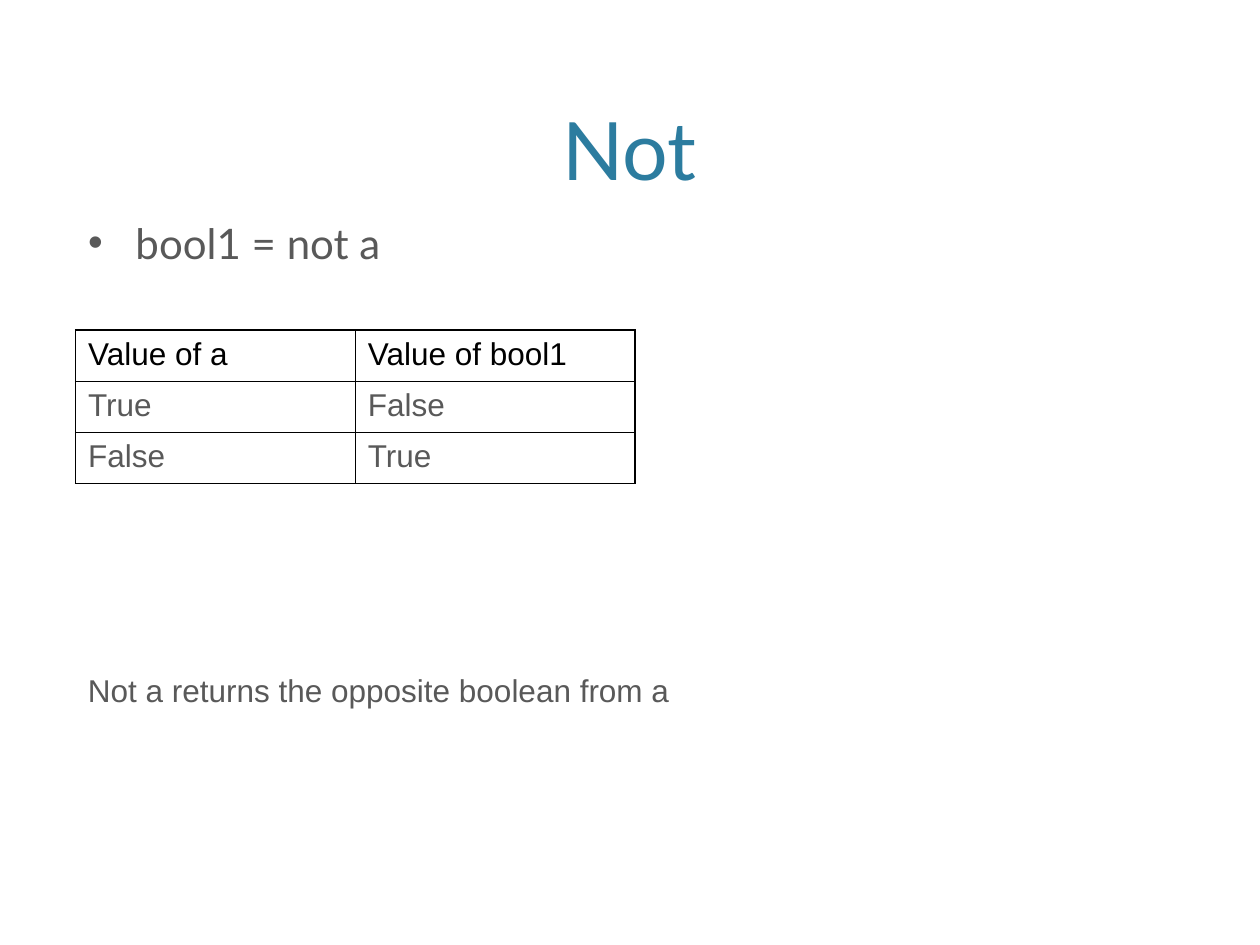
from lxml import etree
from pptx import Presentation
from pptx.dml.color import RGBColor
from pptx.enum.text import MSO_ANCHOR, MSO_AUTO_SIZE, PP_ALIGN
from pptx.oxml import parse_xml
from pptx.oxml.ns import nsdecls, qn
from pptx.util import Inches, Pt

BOTTOM, TOP = MSO_ANCHOR.BOTTOM, MSO_ANCHOR.TOP
FIXED, GROW = MSO_AUTO_SIZE.NONE, MSO_AUTO_SIZE.SHAPE_TO_FIT_TEXT
CENTER, LEFT = PP_ALIGN.CENTER, PP_ALIGN.LEFT
BLUE, GRAY, BLACK = "2C7C9F", "595959", "000000"
ROWS = [("Value of a", "Value of bool1"), ("True", "False"), ("False", "True")]


def paint(color):
    return RGBColor.from_string(color)


def place(shape, box):
    shape.left, shape.top, shape.width, shape.height = map(Inches, box)


def write(frame, text, face, size, color, align=LEFT):
    frame.text = text
    para = frame.paragraphs[0]
    para.alignment = align
    font = para.font
    font.name, font.size = face, Pt(size)
    font.color.rgb = paint(color)
    return para


def add_title(slide, box):
    title = slide.shapes.title
    place(title, box)
    frame = title.text_frame
    frame.vertical_anchor, frame.auto_size = BOTTOM, FIXED
    write(frame, "Not", "Lato", 46, BLUE, CENTER)


def add_body(slide, box):
    body = slide.placeholders[1]
    place(body, box)
    frame = body.text_frame
    frame.vertical_anchor, frame.auto_size = TOP, FIXED
    props = frame.paragraphs[0]._p.get_or_add_pPr()
    props.set("marL", "0")
    props.set("indent", "0")
    etree.SubElement(props, qn("a:buNone"))
    para = write(frame, "bool1 = not a", "Lato", 24, GRAY)
    para.space_before = Pt(0)
    para.line_spacing = 0.8


def add_edges(cell, color, width):
    props = cell._tc.get_or_add_tcPr()
    for spot, side in enumerate(("lnL", "lnR", "lnT", "lnB")):
        edge = parse_xml(
            f'<a:{side} {nsdecls("a")} w="{Pt(width)}"><a:solidFill>'
            f'<a:srgbClr val="{color}"/></a:solidFill></a:{side}>'
        )
        props.insert(spot, edge)


def add_truth(slide, box):
    frame = slide.shapes.add_table(len(ROWS), len(ROWS[0]), *map(Inches, box))
    table = frame.table
    table.first_row = table.horz_banding = False
    for row, words in enumerate(ROWS):
        for col, word in enumerate(words):
            cell = table.cell(row, col)
            cell.fill.background()
            add_edges(cell, BLACK, 1)
            write(cell.text_frame, word, "Arial", 18, GRAY if row else BLACK)


def add_note(slide, box):
    frame = slide.shapes.add_textbox(*map(Inches, box)).text_frame
    frame.word_wrap, frame.auto_size = True, GROW
    write(frame, "Not a returns the opposite boolean from a", "Arial", 18, GRAY)


def main():
    deck = Presentation()
    deck.slide_width, deck.slide_height = Inches(10), Inches(7.5)
    slide = deck.slides.add_slide(deck.slide_layouts[1])
    add_title(slide, (0.6, 0.15, 8.79, 1.46))
    add_body(slide, (0.6, 1.75, 8.79, 4.75))
    add_truth(slide, (0.6, 2.62, 4.44, 1.22))
    add_note(slide, (0.6, 5.28, 6.9, 0.4))
    deck.save("out.pptx")


if __name__ == "__main__":
    main()
